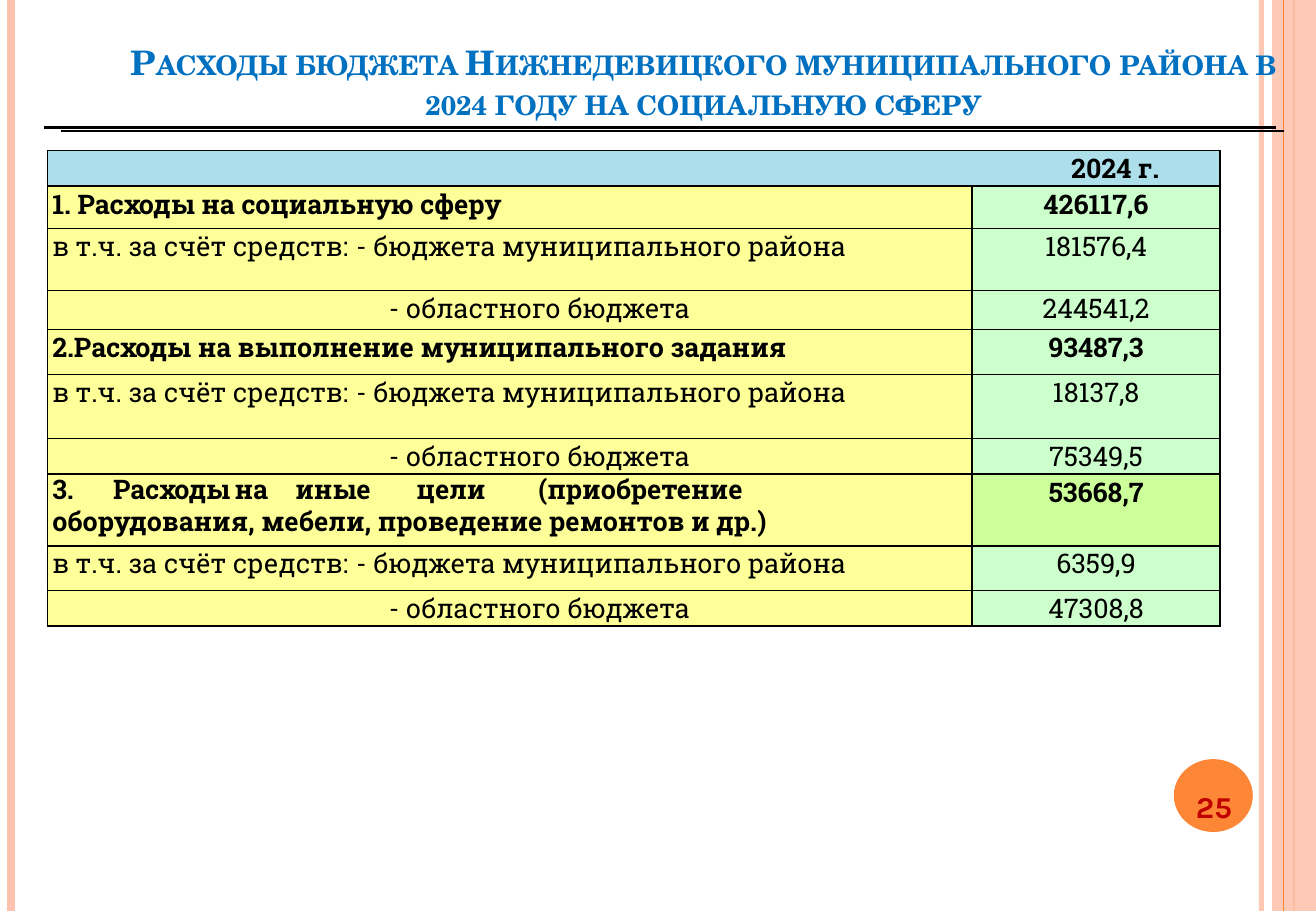
from lxml.etree import SubElement
from pptx import Presentation
from pptx.dml.color import RGBColor
from pptx.enum.shapes import MSO_CONNECTOR, MSO_SHAPE
from pptx.enum.text import MSO_ANCHOR, MSO_AUTO_SIZE, PP_ALIGN
from pptx.oxml.ns import qn
from pptx.util import Emu, Pt

HEX = {"rose": "FEC3AE", "orange": "FE8637", "blue": "0070C0", "red": "C00000",
       "black": "000000", "sky": "ACDFEA", "yellow": "FFFF99",
       "mint": "CCFFCC", "lime": "CCFF99"}
FUND = "в т.ч. за счёт средств:\t- бюджета муниципального района"
AREA = "- областного бюджета"
GOALS = ("3.\tРасходы\tна\tиные\tцели\t(приобретение\tоборудования, "
         "мебели, проведение ремонтов и др.)")
GOAL_TABS = (46, 169, 217, 302, 379, 577)
# label, value, row height
ROWS = [
    ("1. Расходы на социальную сферу", "426117,6", 35),
    (FUND, "181576,4", 51),
    (AREA, "244541,2", 32),
    ("2.Расходы на выполнение муниципального задания", "93487,3", 37),
    (FUND, "18137,8", 53),
    (AREA, "75349,5", 29),
    (GOALS, "53668,7", 59),
    (FUND, "6359,9", 37),
    (AREA, "47308,8", 28),
]


def px(n):
    """100 px make one inch."""
    return Emu(n * 9144)


def tint(name):
    return RGBColor.from_string(HEX[name])


def fade(elem, share):
    """Sets the opacity, in percent, of the colour inside elem."""
    for color in elem.iter(qn("a:srgbClr")):
        SubElement(color, qn("a:alpha"), val=str(share * 1000))


def draw_line(slide, x1, y1, x2, y2, color, width):
    line = slide.shapes.add_connector(
        MSO_CONNECTOR.STRAIGHT, px(x1), px(y1), px(x2), px(y2))
    line.line.color.rgb = tint(color)
    line.line.width = Pt(width)
    SubElement(line.element.spPr, qn("a:effectLst"))
    return line


def draw_shape(slide, kind, x, y, w, h, color):
    shape = slide.shapes.add_shape(kind, px(x), px(y), px(w), px(h))
    shape.shadow.inherit = False
    shape.fill.solid()
    shape.fill.fore_color.rgb = tint(color)
    shape.line.fill.background()
    return shape


def add_run(para, text, font, size, color, bold=False):
    run = para.add_run()
    run.text = text
    run.font.name = font
    run.font.size = Pt(size)
    run.font.bold = bold
    run.font.color.rgb = tint(color)
    return run


def set_frame(frame, top, anchor):
    frame.margin_left = frame.margin_right = frame.margin_bottom = 0
    frame.margin_top = px(top)
    frame.vertical_anchor = anchor
    frame.word_wrap = True
    frame.auto_size = MSO_AUTO_SIZE.NONE


def add_rails(slide, w, h):
    """Vertical stripes along both edges."""
    rail = draw_line(slide, w - 45, 0, w - 45, h, "rose", 3)
    fade(rail.element, 93)
    draw_line(slide, 9, 0, 9, h, "rose", 4.5)
    draw_line(slide, w - 18, 0, w - 18, h, "orange", 1.5)
    band = draw_shape(slide, MSO_SHAPE.RECTANGLE, w - 36, 0, 36, h, "rose")
    fade(band.element.spPr, 87)
    draw_line(slide, w - 27, 0, w - 27, h, "orange", 0.75)


def add_title(slide, x, y, w, h):
    title = slide.shapes.title
    title.left, title.top, title.width, title.height = map(px, (x, y, w, h))
    title.element.getparent().append(title.element)
    set_frame(title.text_frame, 38, MSO_ANCHOR.BOTTOM)
    para = title.text_frame.paragraphs[0]
    para.alignment = PP_ALIGN.CENTER
    para._p.get_or_add_pPr().set("marL", str(px(75)))
    run = add_run(para, "Расходы бюджета Нижнедевицкого муниципального района "
                  "в 2024 году на социальную сферу",
                  "TeX Gyre Schola", 20, "blue", True)
    run.font._element.set("cap", "small")
    base = y + h
    draw_line(slide, x + 18, base + 7, x + w + 6, base + 7, "black", 1.35)
    draw_line(slide, x + 4, base + 4, x + w - 1, base + 4, "black", 1.35)


def add_badge(slide, x, y, w, h):
    draw_shape(slide, MSO_SHAPE.OVAL, x, y, w, h, "orange")
    box = slide.shapes.add_textbox(px(x - 3), px(y + 8), px(w + 7), px(46))
    set_frame(box.text_frame, 16, MSO_ANCHOR.MIDDLE)
    para = box.text_frame.paragraphs[0]
    para.alignment = PP_ALIGN.CENTER
    add_run(para, "25", "Karla", 18, "red", True)


def set_cell(cell, fill):
    cell.margin_left = cell.margin_right = 0
    cell.margin_top = cell.margin_bottom = 0
    cell.fill.solid()
    cell.fill.fore_color.rgb = tint(fill)
    props = cell._tc.get_or_add_tcPr()
    for i, side in enumerate(("lnL", "lnR", "lnT", "lnB")):
        edge = SubElement(props, qn("a:" + side), w=str(Pt(1)))
        solid = SubElement(edge, qn("a:solidFill"))
        SubElement(solid, qn("a:srgbClr"), val=HEX["black"])
        props.insert(i, edge)


def fill_cell(cell, text, fill, bold, align):
    set_cell(cell, fill)
    para = cell.text_frame.paragraphs[0]
    para.alignment = align
    add_run(para, text, "Roboto Slab", 16, "black", bold)
    return para


def set_indent(para, left, tabs):
    props = para._p.get_or_add_pPr()
    props.set("marL", str(px(left)))
    props.set("indent", "0")
    if tabs:
        stops = SubElement(props, qn("a:tabLst"))
        for tab in tabs:
            SubElement(stops, qn("a:tab"), pos=str(px(tab)), algn="l")


def add_costs(slide, x, y, widths, head):
    """Table of costs; head is the height of its first row."""
    tall = head + sum(row[2] for row in ROWS)
    table = slide.shapes.add_table(len(ROWS) + 1, 2, px(x), px(y),
                                   px(sum(widths)), px(tall)).table
    table.first_row = table.horz_banding = False
    for col, wide in zip(table.columns, widths):
        col.width = px(wide)
    table.rows[0].height = px(head)
    first, last = table.cell(0, 0), table.cell(0, 1)
    first.merge(last)
    fill_cell(first, "2024 г.", "sky", True, PP_ALIGN.RIGHT)
    first.margin_right = px(50)
    set_cell(last, "sky")
    for i, (label, value, height) in enumerate(ROWS, 1):
        table.rows[i].height = px(height)
        bold = label not in (FUND, AREA)
        para = fill_cell(table.cell(i, 0), label, "yellow", bold, PP_ALIGN.LEFT)
        tabs = {FUND: (273,), GOALS: GOAL_TABS}.get(label, ())
        set_indent(para, 281 if label == AREA else 4, tabs)
        if label == GOALS:
            para.line_spacing = Pt(19.1)
        fill_cell(table.cell(i, 1), value, "lime" if label == GOALS else "mint",
                  bold, PP_ALIGN.CENTER)


def main():
    deck = Presentation()
    wide, tall = 1083, 750
    deck.slide_width, deck.slide_height = px(wide), px(tall)
    slide = deck.slides.add_slide(deck.slide_layouts[5])
    add_rails(slide, wide, tall)
    add_badge(slide, 966, 625, 65, 60)
    add_title(slide, 32, -4, 1019, 105)
    add_costs(slide, 39, 124, (761, 204), 29)
    deck.save("out.pptx")


if __name__ == "__main__":
    main()
